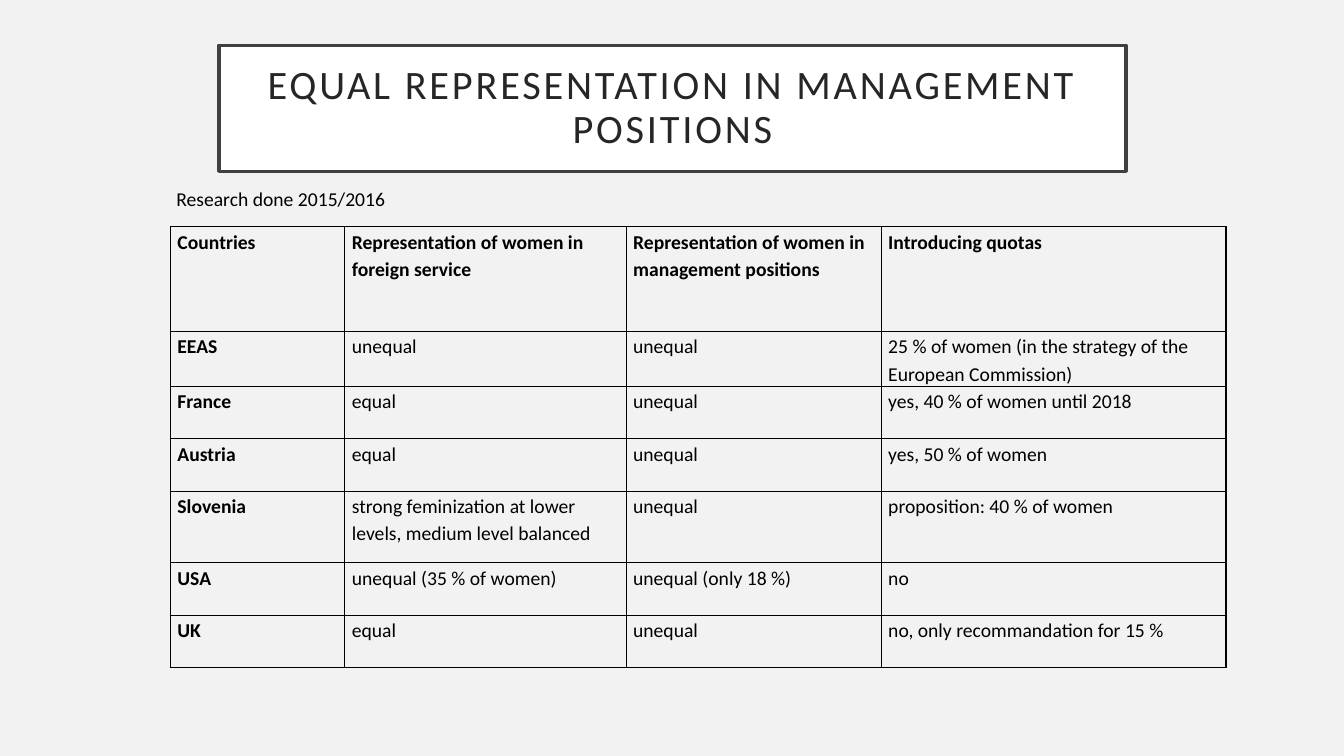
import lxml.etree
import pptx
import pptx.dml.color
import pptx.enum.shapes
import pptx.enum.text
import pptx.oxml.ns
import pptx.util

Inches = pptx.util.Inches
Pt = pptx.util.Pt

COLUMN_WIDTHS = [1.73, 2.79, 2.53, 3.42]
ROW_HEIGHTS = [1.04, 0.52, 0.52, 0.52, 0.71, 0.52, 0.52]
COUNTRY_ROWS = [
    ["Countries", "Representation of women in foreign service",
     "Representation of women in management positions", "Introducing quotas"],
    ["EEAS", "unequal", "unequal",
     "25 % of women (in the strategy of the European Commission)"],
    ["France", "equal", "unequal", "yes, 40 % of women until 2018"],
    ["Austria", "equal", "unequal", "yes, 50 % of women"],
    ["Slovenia", "strong feminization at lower levels, medium level balanced",
     "unequal", "proposition: 40 % of women"],
    ["USA", "unequal (35 % of women)", "unequal (only 18 %)", "no"],
    ["UK", "equal", "unequal", "no, only recommandation for 15 %"],
]


def rgb(hex_color):
    return pptx.dml.color.RGBColor.from_string(hex_color)


def apply(target, values):
    """Set each named attribute of target."""
    for name, value in values.items():
        setattr(target, name, value)


class SlideBuilder:
    font = "Calibri"
    body_size = 14
    ink = "000000"

    def __init__(self, slide, background):
        self.slide = slide
        slide.background.fill.solid()
        slide.background.fill.fore_color.rgb = rgb(background)

    def add_text(self, frame, text, size=body_size, color=ink, bold=False, **paragraph_format):
        paragraph = frame.paragraphs[0]
        apply(paragraph, paragraph_format)
        run = paragraph.add_run()
        run.text = text
        apply(run.font, {"name": self.font, "size": Pt(size), "bold": bold})
        run.font.color.rgb = rgb(color)
        return run

    def title_box(self, text, left, top, width, height):
        box = self.slide.shapes.add_shape(
            pptx.enum.shapes.MSO_SHAPE.RECTANGLE,
            Inches(left), Inches(top), Inches(width), Inches(height))
        box.shadow.inherit = False
        box.fill.solid()
        box.fill.fore_color.rgb = rgb("FFFFFF")
        box.line.color.rgb = rgb("404040")
        box.line.width = Pt(2.5)
        inset = Inches(0.2)
        apply(box.text_frame, {
            "word_wrap": True,
            "vertical_anchor": pptx.enum.text.MSO_ANCHOR.MIDDLE,
            "margin_left": inset, "margin_right": inset,
            "margin_top": inset, "margin_bottom": inset})
        run = self.add_text(box.text_frame, text, 28.8, "262626", line_spacing=0.9,
                            alignment=pptx.enum.text.PP_ALIGN.CENTER)
        run._r.get_or_add_rPr().set("spc", "200")

    def caption(self, text, left, top, width, height):
        box = self.slide.shapes.add_textbox(
            Inches(left), Inches(top), Inches(width), Inches(height))
        apply(box.text_frame, {
            "word_wrap": True,
            "auto_size": pptx.enum.text.MSO_AUTO_SIZE.SHAPE_TO_FIT_TEXT})
        self.add_text(box.text_frame, text)

    def table(self, rows, left, top, column_widths, row_heights):
        table = self.slide.shapes.add_table(
            len(rows), len(column_widths), Inches(left), Inches(top),
            Inches(sum(column_widths)), Inches(sum(row_heights))).table
        apply(table, {"first_row": False, "horz_banding": False})
        for column, width in zip(table.columns, column_widths):
            column.width = Inches(width)
        for row, height in zip(table.rows, row_heights):
            row.height = Inches(height)
        for r, texts in enumerate(rows):
            for c, text in enumerate(texts):
                cell = table.cell(r, c)
                apply(cell, {
                    "margin_left": Inches(0.07), "margin_right": Inches(0.07),
                    "margin_top": 0, "margin_bottom": 0})
                self.add_text(cell.text_frame, text, bold=r == 0 or c == 0,
                              line_spacing=1.15, space_after=Pt(10))
                cell.fill.background()
                self.border(cell)

    def border(self, cell):
        """Draw a thin line on all four sides of the cell."""
        qn = pptx.oxml.ns.qn
        properties = cell._tc.get_or_add_tcPr()
        for position, side in enumerate(("lnL", "lnR", "lnT", "lnB")):
            line = lxml.etree.Element(qn(f"a:{side}"), w=str(Pt(1)))
            fill = lxml.etree.SubElement(line, qn("a:solidFill"))
            lxml.etree.SubElement(fill, qn("a:srgbClr"), val=self.ink)
            properties.insert(position, line)


def main():
    presentation = pptx.Presentation()
    apply(presentation, {"slide_width": Inches(13.33), "slide_height": Inches(7.5)})
    blank = presentation.slide_layouts[6]
    builder = SlideBuilder(presentation.slides.add_slide(blank), "F2F2F2")
    builder.title_box("EQUAL REPRESENTATION IN MANAGEMENT POSITIONS", 2.17, 0.45, 9, 1.25)
    builder.table(COUNTRY_ROWS, 1.69, 2.25, COLUMN_WIDTHS, ROW_HEIGHTS)
    builder.caption("Research done 2015/2016", 1.65, 1.81, 4.15, 0.34)
    presentation.save("out.pptx")


if __name__ == "__main__":
    main()
